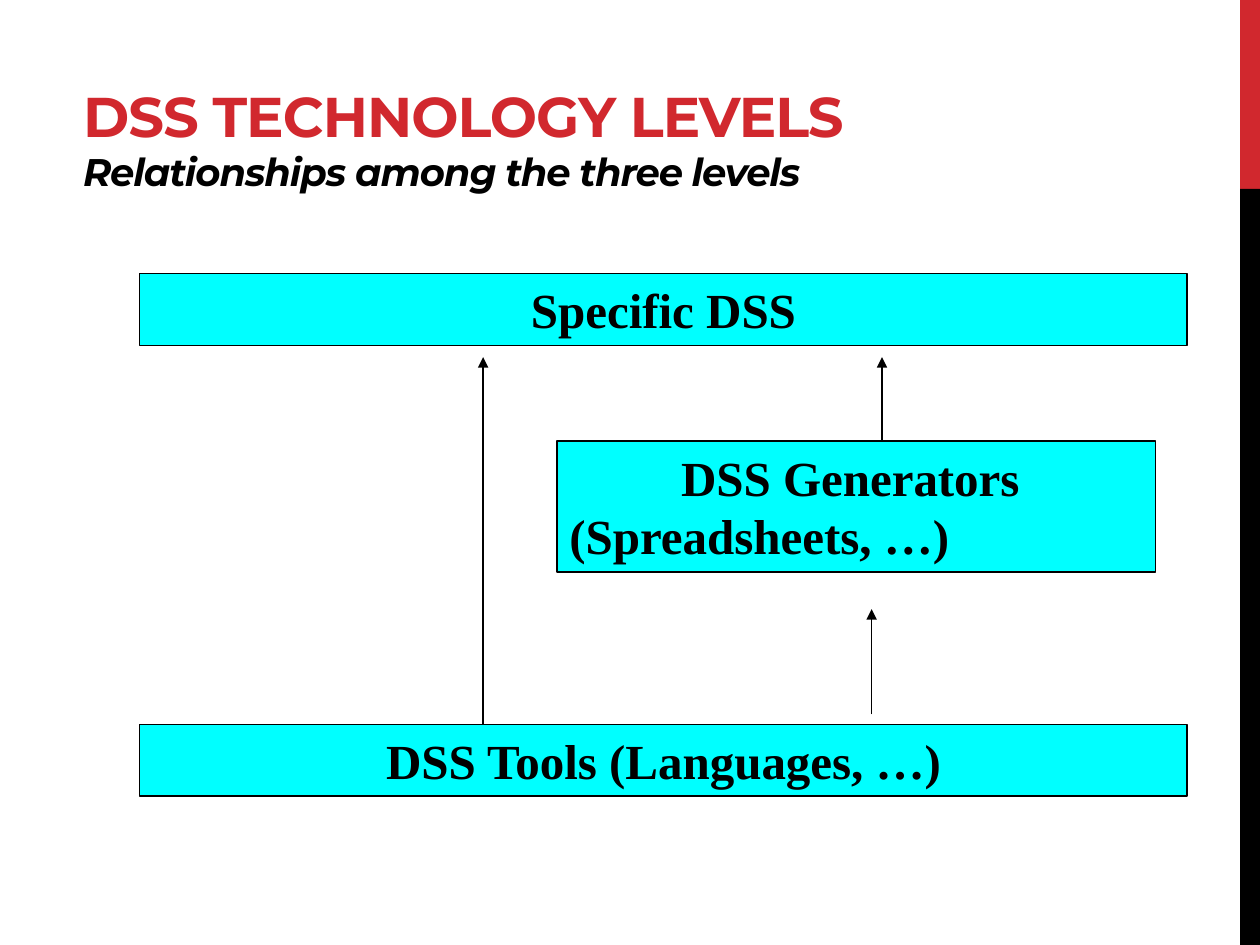
import pptx
import pptx.util
import pptx.dml.color
import pptx.enum.shapes
import pptx.enum.text
import pptx.oxml

Cm, Pt = pptx.util.Cm, pptx.util.Pt
RGBColor = pptx.dml.color.RGBColor
RECT = pptx.enum.shapes.MSO_SHAPE.RECTANGLE
ALIGN = pptx.enum.text.PP_ALIGN
ANCHOR = pptx.enum.text.MSO_ANCHOR
AUTO = pptx.enum.text.MSO_AUTO_SIZE

RED = RGBColor(0xD1, 0x28, 0x2E)
BLACK = RGBColor(0, 0, 0)
WHITE = RGBColor(255, 255, 255)
CYAN = RGBColor(0, 255, 255)


def add_run(p, text, size, font, color=BLACK, italic=None, spacing=None):
    r = p.add_run()
    r.text = text
    r.font.size = Pt(size)
    r.font.name = font
    r.font.bold = True
    r.font.italic = italic
    r.font.color.rgb = color
    if spacing is not None:
        r.font._element.set("spc", str(round(spacing * 100)))


def add_rect(s, left, top, width, height, fill):
    sp = s.shapes.add_shape(RECT, Cm(left), Cm(top), Cm(width), Cm(height))
    sp.shadow.inherit = False
    sp.fill.solid()
    sp.fill.fore_color.rgb = fill
    sp.line.fill.background()
    return sp


prs = pptx.Presentation()
prs.slide_width, prs.slide_height = Cm(25.4), Cm(19.05)
s = prs.slides.add_slide(prs.slide_layouts[5])

add_rect(s, 25, 0, 0.4, 3.81, RED)
add_rect(s, 25, 3.81, 0.4, 15.24, BLACK)

title = s.shapes.title
title.left, title.top, title.width, title.height = Cm(1.42), Cm(1.32), Cm(22.86), Cm(2.92)
title.fill.solid()
title.fill.fore_color.rgb = WHITE
tf = title.text_frame
tf.auto_size = AUTO.NONE
tf.vertical_anchor = ANCHOR.MIDDLE
p = tf.paragraphs[0]
p.alignment = ALIGN.LEFT
add_run(p, "DSS TECHNOLOGY LEVELS", 32, "Montserrat", color=RED, spacing=-0.6)
p.add_line_break()
add_run(p, "Relationships among the three levels", 22, "Montserrat", italic=True, spacing=-0.6)

boxes = [
    (2.82, 5.51, 21.11, 1.45, [("Specific DSS", ALIGN.CENTER)]),
    (11.23, 8.89, 12.07, 2.64, [("DSS Generators ", ALIGN.CENTER),
                                ("(Spreadsheets, …)", ALIGN.LEFT)]),
    (2.82, 14.6, 21.11, 1.45, [("DSS Tools (Languages, …)", ALIGN.CENTER)]),
]
for left, top, width, height, lines in boxes:
    sp = add_rect(s, left, top, width, height, CYAN)
    sp.line.color.rgb = BLACK
    sp.line.width = Pt(0.75)
    tf = sp.text_frame
    tf.word_wrap = True
    tf.auto_size = AUTO.SHAPE_TO_FIT_TEXT
    tf.vertical_anchor = ANCHOR.TOP
    for i, (text, align) in enumerate(lines):
        p = tf.add_paragraph() if i else tf.paragraphs[0]
        p.alignment = align
        add_run(p, text, 28, "Times New Roman")

for x, start, end in [(17.78, 8.89, 7.2), (9.74, 14.6, 7.2), (17.57, 14.4, 12.28)]:
    arrow = s.shapes.add_connector(pptx.enum.shapes.MSO_CONNECTOR.STRAIGHT,
                                   Cm(x), Cm(start), Cm(x), Cm(end))
    arrow.line.color.rgb = BLACK
    arrow.line.width = Pt(1)
    ln = arrow.line._get_or_add_ln()
    ns = pptx.oxml.ns.nsdecls("a")
    ln.append(pptx.oxml.parse_xml(f'<a:tailEnd {ns} type="triangle"/>'))
    ln.getparent().append(pptx.oxml.parse_xml(f"<a:effectLst {ns}/>"))

prs.save("out.pptx")
